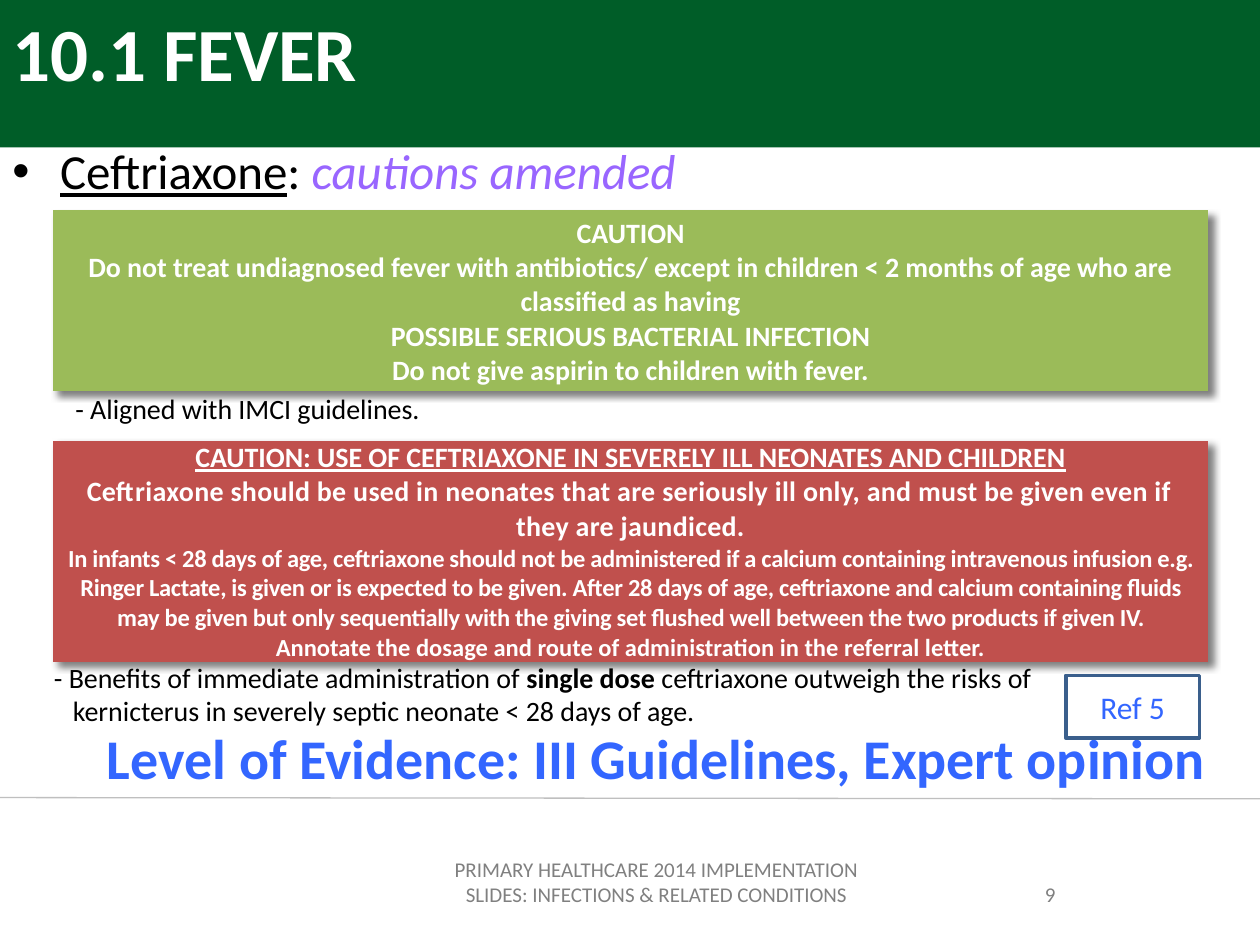
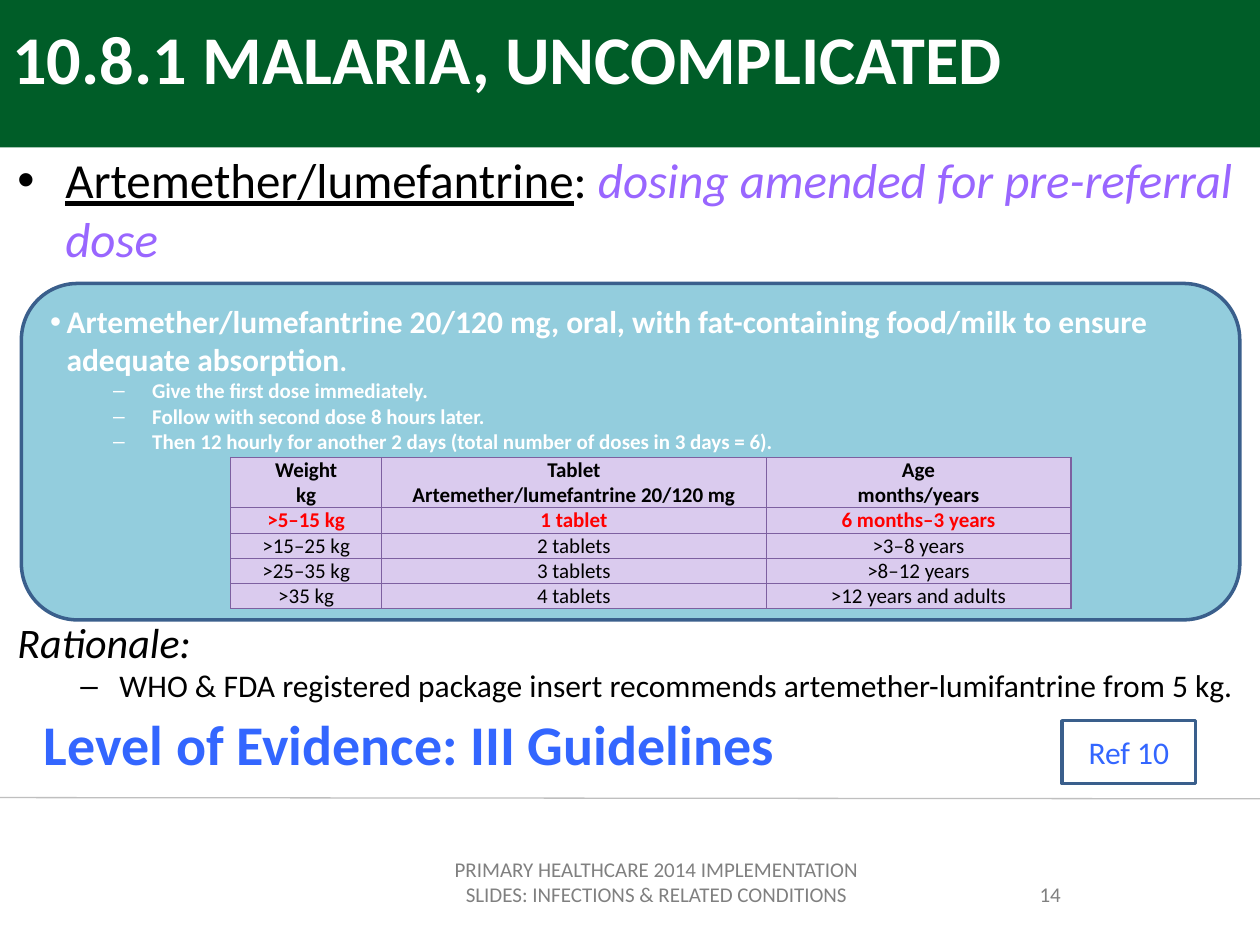
"""Build two slides on fever and malaria treatment from a primary healthcare set."""
from lxml import etree
from pptx import Presentation, util as u
from pptx.dml.color import RGBColor
from pptx.enum import shapes, text
from pptx.oxml.ns import qn

C = {"band": "005D28", "rule": "BFBFBF", "white": "FFFFFF", "black": "000000",
     "grey": "808080", "purple": "9966FF", "blue": "3366FF", "edge": "3A5F8C",
     "green": "9BBB59", "brick": "C0504D", "sky": "93CDDD", "lilac": "DACBEE",
     "grid": "7D60A0", "red": "FF0000"}
CENTER = text.PP_ALIGN.CENTER
NO_STYLE = "{2D5ABB26-0587-4C30-8999-92F81FD0307C}"


def write(tf, paras, **base):
    """Fill a text frame; a paragraph is a string or (format, (text, run format), ...)."""
    for i, para in enumerate(paras):
        fmt, *runs = ({}, (para, {})) if isinstance(para, str) else para
        fmt = {"size": 16, "color": "black", **base, **fmt}
        p = tf.paragraphs[0] if i == 0 else tf.add_paragraph()
        p.alignment = fmt.get("align")
        pPr = p._p.get_or_add_pPr()
        for key in ("marL", "indent"):
            if key in fmt:
                pPr.set(key, str(u.Inches(fmt[key])))
        if "bullet" in fmt:
            etree.SubElement(pPr, qn("a:buFont"), typeface="Arial")
            etree.SubElement(pPr, qn("a:buChar"), char=fmt["bullet"])
        for words, extra in runs:
            look = {**fmt, **extra}
            r = p.add_run()
            r.text = words
            r.font.name = "Calibri"
            r.font.size = u.Pt(look["size"])
            r.font.color.rgb = RGBColor.from_string(C[look["color"]])
            for key in ("bold", "italic", "underline"):
                setattr(r.font, key, look.get(key, False))
            if "spc" in look:
                r._r.get_or_add_rPr().set("spc", str(look["spc"]))


def box(s, at, paras, kind=None, fill=None, **base):
    """Add a text box, or an outlined shape of the given kind, with text."""
    at = [u.Inches(v) for v in at]
    sp = s.shapes.add_shape(kind, *at) if kind else s.shapes.add_textbox(*at)
    if kind:
        sp.shadow.inherit = False
        sp.line.color.rgb = RGBColor.from_string(C["edge"])
        sp.line.width = u.Pt(2)
        if fill:
            sp.fill.solid()
            sp.fill.fore_color.rgb = RGBColor.from_string(C[fill])
        else:
            sp.fill.background()
    tf = sp.text_frame
    tf.word_wrap = True
    tf.vertical_anchor = text.MSO_ANCHOR.MIDDLE if kind and not fill else text.MSO_ANCHOR.TOP
    write(tf, paras, **base)
    return sp


prs = Presentation()
prs.slide_width, prs.slide_height = u.Inches(10), u.Inches(7.5)

HANG = {"marL": 0.38, "indent": -0.38, "bullet": "•", "size": 28}
DASH = {"marL": 0.81, "indent": -0.31, "bullet": "–"}
UNDER, AMENDED = {"underline": True}, {"color": "purple", "italic": True}

pages = [
    {"title": "10.1 FEVER", "title_at": (0, 0, 9, 1.25), "title_size": 42.9, "number": "9",
     "body_at": (0, 1.07, 9.83, 0.6), "drug": "Ceftriaxone", "change": "cautions amended",
     "level": "Level of Evidence: III Guidelines, Expert opinion",
     "level_at": (0.75, 5.69, 9, 0.64), "ref": "Ref 5", "ref_at": (8.46, 5.36, 1.06, 0.5)},
    {"title": "10.8.1 MALARIA, UNCOMPLICATED", "title_at": (0, 0.08, 9, 0.83),
     "title_size": 39, "number": "14", "body_at": (0.04, 1.14, 9.96, 1.1),
     "drug": "Artemether/lumefantrine", "change": "dosing amended for pre-referral dose",
     "level": "Level of Evidence: III Guidelines", "level_at": (0.25, 5.58, 8.58, 0.64),
     "ref": "Ref 10", "ref_at": (8.43, 5.72, 1.06, 0.5)},
]

for page in pages:
    s = prs.slides.add_slide(prs.slide_layouts[6])
    band = s.shapes.add_shape(shapes.MSO_SHAPE.RECTANGLE, 0, 0, u.Inches(10), u.Inches(1.17))
    band.shadow.inherit = False
    band.fill.solid()
    band.fill.fore_color.rgb = RGBColor.from_string(C["band"])
    band.line.fill.background()
    rule = s.shapes.add_connector(shapes.MSO_CONNECTOR.STRAIGHT, 0, u.Inches(6.33),
                                  u.Inches(10), u.Inches(6.34))
    rule.line.color.rgb = RGBColor.from_string(C["rule"])
    rule.line.width = u.Pt(0.75)
    etree.SubElement(rule._element.spPr, qn("a:effectLst"))
    box(s, page["title_at"], [page["title"]], size=page["title_size"], color="white", bold=True)
    box(s, page["body_at"], [(HANG, (page["drug"], UNDER), (": ", {}),
                              (page["change"], AMENDED))])
    box(s, (7.17, 6.95, 2.33, 0.4), [page["number"]], size=12, color="grey", align=CENTER)
    box(s, (3.42, 6.75, 3.58, 0.55),
        ["PRIMARY HEALTHCARE 2014 IMPLEMENTATION SLIDES: INFECTIONS & RELATED CONDITIONS"],
        size=12, color="grey", align=CENTER)
    box(s, page["level_at"], [page["level"]], size=32, color="blue", bold=True)
    box(s, page["ref_at"], [page["ref"]], shapes.MSO_SHAPE.RECTANGLE,
        size=18, color="blue", align=CENTER)

fever, malaria = prs.slides
box(fever, (0.5, 3.06, 3.2, 0.37), ["- Aligned with IMCI guidelines."])
box(fever, (0.33, 5.19, 9.17, 0.64), [
    ({}, ("- Benefits of immediate administration of ", {}), ("single dose ", {"bold": True}),
     ("ceftriaxone outweigh the risks of", {})),
    ({"marL": 0.15}, ("kernicterus in severely septic neonate < 28 days of age.", {}))])

doses = ["Give the first dose immediately.", "Follow with second dose 8 hours later.",
         "Then 12 hourly for another 2 days (total number of doses in 3 days = 6)."]
panel = box(malaria, (0.17, 2.25, 9.67, 2.67), [
    ({"marL": 0.13, "indent": -0.13, "bullet": "•", "size": 18},
     ("Artemether/lumefantrine 20/120 mg, oral, with fat-containing food/milk to ensure "
      "adequate absorption", {}), (".", {"size": 16})),
    *[({**DASH, "size": 12}, (dose, {})) for dose in doses]],
    shapes.MSO_SHAPE.ROUNDED_RECTANGLE, "sky", color="white", bold=True,
    align=text.PP_ALIGN.LEFT)
panel.text_frame.margin_top = u.Inches(0.02)
box(malaria, (0.04, 4.84, 9.96, 0.74), [
    ({"size": 24}, ("Rationale:", {"italic": True})),
    ({**DASH, "size": 18},
     ("WHO & FDA registered package insert recommends artemether-lumifantrine from 5 kg.", {}))])

caution = ["CAUTION",
           "Do not treat undiagnosed fever with antibiotics/ except in children < 2 months of age "
           "who are classified as having",
           "POSSIBLE SERIOUS BACTERIAL INFECTION", "Do not give aspirin to children with fever."]
ceftriaxone = [
    (UNDER, ("CAUTION: USE OF CEFTRIAXONE IN SEVERELY ILL NEONATES AND CHILDREN", {})),
    ({"spc": 20}, ("Ceftriaxone should be used in neonates that are seriously ill only, and must "
                   "be given even if they are jaundiced.", {})),
    ({"size": 14, "spc": -20},
     ("In infants < 28 days of age, ceftriaxone should not be administered if a calcium "
      "containing intravenous infusion e.g. Ringer Lactate, is given or is expected to be given. "
      "After 28 days of age, ceftriaxone and calcium containing fluids may be given but only "
      "sequentially with the giving set flushed well between the two products if given IV.", {})),
    ({"size": 14},
     ("Annotate the dosage and route of administration in the referral letter.", {}))]
dosing = [
    [["Weight", "kg"], ["Tablet", "Artemether/lumefantrine 20/120 mg"], ["Age", "months/years"]],
    [[">5–15 kg"], ["1 tablet"], ["6 months–3 years"]],
    [[">15–25 kg"], ["2 tablets"], [">3–8 years"]],
    [[">25–35 kg"], ["3 tablets"], [">8–12 years"]],
    [[">35 kg"], ["4 tablets"], [">12 years and adults"]]]
head, changed, plain = {"bold": True}, {"bold": True, "color": "red"}, {}
notice = {"color": "white", "bold": True}

tables = [
    (fever, (0.42, 1.67), [9.17], [1.43], [[caution]], "green", [notice], 16, 0.05, False),
    (fever, (0.42, 3.5), [9.17], [1.75], [[ceftriaxone]], "brick", [notice], 16, 0, False),
    (malaria, (1.83, 3.63), [1.2, 3.05, 2.42], [0.4] + [0.2] * 4, dosing, "lilac",
     [head, changed] + [plain] * 3, 12, 0, True)]

for s, (x, y), widths, heights, rows, fill, looks, size, inset, grid in tables:
    frame = s.shapes.add_table(len(rows), len(widths), u.Inches(x), u.Inches(y),
                               u.Inches(sum(widths)), u.Inches(sum(heights)))
    tbl = frame.table
    tbl.first_row = tbl.horz_banding = False
    tblPr = tbl._tbl.tblPr
    tblPr.find(qn("a:tableStyleId")).text = NO_STYLE
    if not grid:
        effects = etree.Element(qn("a:effectLst"))
        tblPr.insert(0, effects)
        shadow = etree.SubElement(effects, qn("a:outerShdw"), blurRad="50800", dist="50800",
                                  dir="2700000", algn="tl", rotWithShape="0")
        tone = etree.SubElement(shadow, qn("a:srgbClr"), val=C["black"])
        etree.SubElement(tone, qn("a:alpha"), val="50000")
    for col, width in zip(tbl.columns, widths):
        col.width = u.Inches(width)
    for row, height, cells, look in zip(tbl.rows, heights, rows, looks):
        row.height = u.Inches(height)
        for cell, paras in zip(row.cells, cells):
            cell.margin_left = cell.margin_right = u.Inches(0.07)
            cell.margin_top = cell.margin_bottom = u.Inches(inset)
            write(cell.text_frame, paras, size=size, align=CENTER, **look)
            if grid:
                for side in ("lnL", "lnR", "lnT", "lnB"):
                    ln = etree.SubElement(cell._tc.get_or_add_tcPr(), qn("a:" + side),
                                          w=str(u.Pt(0.75)))
                    solid = etree.SubElement(ln, qn("a:solidFill"))
                    etree.SubElement(solid, qn("a:srgbClr"), val=C["grid"])
            cell.fill.solid()
            cell.fill.fore_color.rgb = RGBColor.from_string(C[fill])

prs.save("out.pptx")
